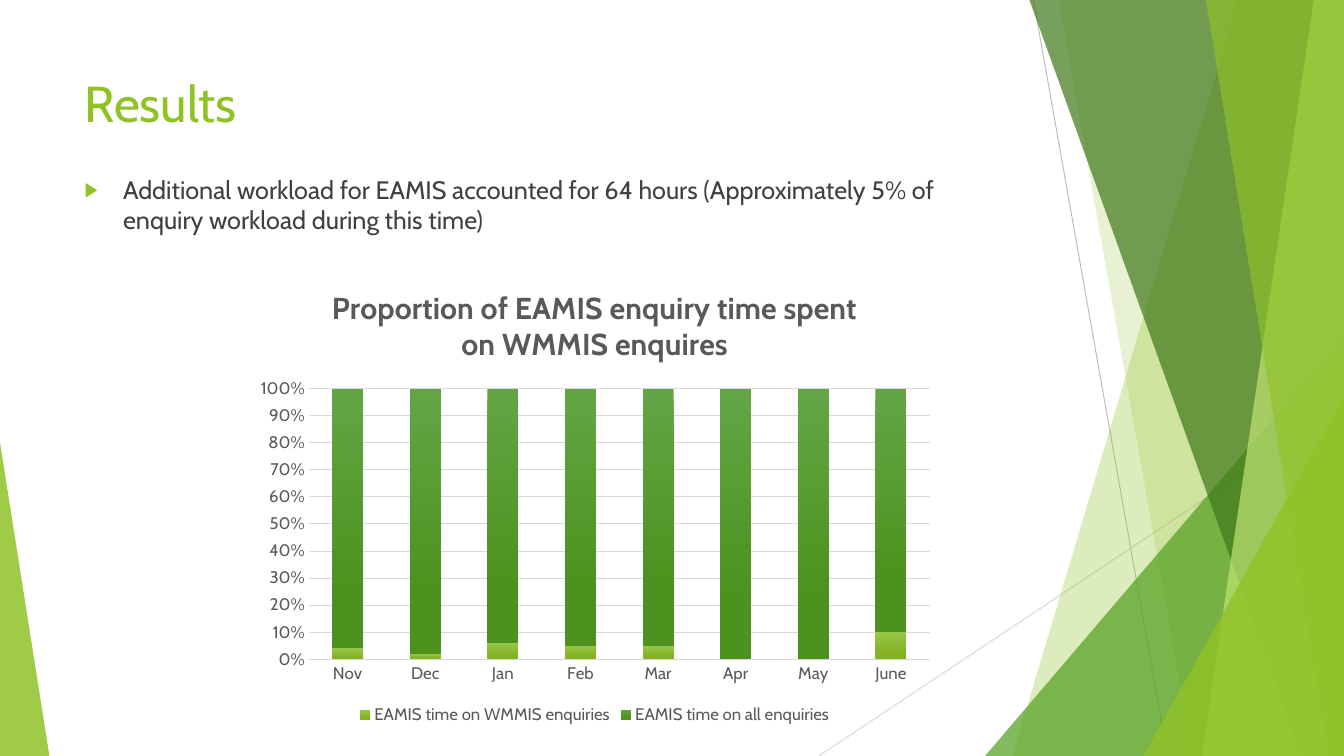
from lxml import etree
from pptx import Presentation
from pptx.chart.data import CategoryChartData
from pptx.dml.color import RGBColor
from pptx.enum.chart import XL_CHART_TYPE, XL_LEGEND_POSITION, XL_TICK_MARK
from pptx.enum.shapes import MSO_CONNECTOR, MSO_SHAPE
from pptx.enum.text import MSO_ANCHOR, PP_ALIGN
from pptx.oxml import parse_xml
from pptx.oxml.ns import qn
from pptx.util import Inches, Pt

STRAIGHT = MSO_CONNECTOR.STRAIGHT
TRIANGLE = MSO_SHAPE.ISOSCELES_TRIANGLE
STACKED_100 = XL_CHART_TYPE.COLUMN_STACKED_100
BOTTOM = XL_LEGEND_POSITION.BOTTOM
NO_TICK = XL_TICK_MARK.NONE
TOP, LEFT = MSO_ANCHOR.TOP, PP_ALIGN.LEFT

FONT = "Cabin"
LIME = RGBColor(0x90, 0xC2, 0x26)
GREEN = RGBColor(0x54, 0xA0, 0x21)
FOREST = RGBColor(0x3F, 0x78, 0x19)
PALE = RGBColor(0xC0, 0xE4, 0x74)
TEXT = RGBColor(0x40, 0x40, 0x40)
CHART_TEXT = RGBColor(0x59, 0x59, 0x59)
GREY = RGBColor(0xBF, 0xBF, 0xBF)
LIGHT_GREY = RGBColor(0xD9, 0xD9, 0xD9)
LIME_TOP, LIME_BASE = RGBColor(0x97, 0xC5, 0x47), RGBColor(0x84, 0xB2, 0x23)
GREEN_TOP, GREEN_BASE = RGBColor(0x63, 0xA5, 0x45), RGBColor(0x4D, 0x92, 0x1E)


def style_font(font, size, color, bold=False):
    font.name, font.size, font.bold = FONT, Pt(size), bold
    font.color.rgb = color


def paint(sp, color, opacity):
    sp.shadow.inherit = False
    sp.line.fill.background()
    sp.fill.solid()
    sp.fill.fore_color.rgb = color
    clr = sp._element.spPr.find(qn("a:solidFill"))[0]
    etree.SubElement(clr, qn("a:alpha"), val=str(opacity * 1000))


prs = Presentation()
prs.slide_width, prs.slide_height = Inches(13.33), Inches(7.5)
s = prs.slides.add_slide(prs.slide_layouts[1])

# Thin crossing lines
for x1, y1, x2, y2, color in [(10.25, 0, 11.58, 7.5, GREY),
                              (13.33, 4.03, 8.12, 7.5, LIGHT_GREY)]:
    line = s.shapes.add_connector(STRAIGHT, Inches(x1), Inches(y1), Inches(x2), Inches(y2))
    line.line.color.rgb = color
    line.line.width = Pt(0.75)
    etree.SubElement(line._element.spPr, qn("a:effectLst"))

# Facets: a band has (top x, bottom x) and runs to the right edge;
# a triangle has (left, top, width, apex) and stands on the bottom edge
facets = [
    ((12.28, 10.04), LIME, 30),
    ((10.5, 11.83), LIME, 20),
    ((9.77, 3.33, 3.56, 1), GREEN, 72),
    ((10.21, 12.91), FOREST, 70),
    ((13.03, 11.92), PALE, 70),
    ((11.96, 13.18), LIME, 65),
    ((11.34, 3.93, 1.99, 1), LIME, 80),
    ((0, 4.39, 0.49, 0), LIME, 85),
]
for geometry, color, opacity in facets:
    if len(geometry) == 2:
        top_x, bottom_x = geometry
        outline = s.shapes.build_freeform(Inches(top_x), 0)
        outline.add_line_segments([(Inches(x), Inches(y)) for x, y in
                                   [(13.33, 0), (13.33, 7.5), (bottom_x, 7.5)]])
        sp = outline.convert_to_shape()
    else:
        x, y, w, apex = geometry
        sp = s.shapes.add_shape(TRIANGLE, Inches(x), Inches(y), Inches(w), Inches(7.5 - y))
        sp.adjustments[0] = apex
    paint(sp, color, opacity)

# Title and body, brought in front of the facets
title, body = s.shapes.title, s.placeholders[1]
for sp, y, h, text, size, color in [
        (title, 0.67, 1.44, "Results", 36, LIME),
        (body, 1.68, 5.15, "Additional workload for EAMIS accounted for 64 hours "
         "(Approximately 5% of enquiry workload during this time)", 18, TEXT)]:
    sp.left, sp.top, sp.width, sp.height = Inches(0.74), Inches(y), Inches(9.4), Inches(h)
    tf = sp.text_frame
    tf.word_wrap = True
    tf.vertical_anchor = TOP
    p = tf.paragraphs[0]
    p.alignment = LEFT
    r = p.add_run()
    r.text = text
    style_font(r.font, size, color)
    s.shapes._spTree.append(sp._element)

# Bullet
p = body.text_frame.paragraphs[0]
p.space_before = Pt(10)
pPr = p._p.get_or_add_pPr()
pPr.set("marL", str(Inches(0.38)))
pPr.set("indent", str(Inches(-0.38)))
bullet_color = etree.SubElement(pPr, qn("a:buClr"))
etree.SubElement(bullet_color, qn("a:srgbClr"), val=str(LIME))
etree.SubElement(pPr, qn("a:buSzPct"), val="80000")
etree.SubElement(pPr, qn("a:buFont"), typeface="Arial")
etree.SubElement(pPr, qn("a:buChar"), char="▶")

# Chart
data = CategoryChartData()
data.categories = ["Nov", "Dec", "Jan", "Feb", "Mar", "Apr", "May", "June"]
data.add_series("EAMIS time on WMMIS enquiries", [4, 2, 6, 5, 5, 0, 0, 10])
data.add_series("EAMIS time on all enquiries", [96, 98, 94, 95, 95, 100, 100, 90])
chart = s.shapes.add_chart(STACKED_100, Inches(2.44), Inches(2.64),
                           Inches(6.92), Inches(4.59), data).chart
style_font(chart.font, 12, CHART_TEXT)
chart.has_title = True
r = chart.chart_title.text_frame.paragraphs[0].add_run()
r.text = "Proportion of EAMIS enquiry time spent on WMMIS enquires"
style_font(r.font, 21.6, CHART_TEXT, bold=True)
chart.chart_title.include_in_layout = False

chart.has_legend = True
chart.legend.position = BOTTOM
chart.legend.include_in_layout = False
style_font(chart.legend.font, 12, CHART_TEXT)

# Axes
cat_axis, val_axis = chart.category_axis, chart.value_axis
for axis in (cat_axis, val_axis):
    axis.major_tick_mark = axis.minor_tick_mark = NO_TICK
    style_font(axis.tick_labels.font, 12, CHART_TEXT)
cat_axis.format.line.color.rgb = LIGHT_GREY
cat_axis.format.line.width = Pt(1)
val_axis.format.line.fill.background()
val_axis.minimum_scale, val_axis.maximum_scale, val_axis.major_unit = 0, 1, 0.1
val_axis.tick_labels.number_format = "0%"
val_axis.tick_labels.number_format_is_linked = False
val_axis.major_gridlines.format.line.color.rgb = LIGHT_GREY
val_axis.major_gridlines.format.line.width = Pt(0.75)

# Columns
plot = chart.plots[0]
plot.gap_width, plot.overlap, plot.vary_by_categories = 150, 100, False
for series, colors in zip(plot.series, [(LIME_TOP, LIME_BASE), (GREEN_TOP, GREEN_BASE)]):
    fill = series.format.fill
    fill.gradient()
    fill.gradient_angle = 270
    for stop, position, color in zip(fill.gradient_stops, (0, 0.78), colors):
        stop.position = position
        stop.color.rgb = color

# Plot area position, as fractions of the chart
plot_area = chart._chartSpace.chart.plotArea
for old in plot_area.findall(qn("c:layout")):
    plot_area.remove(old)
fractions = "".join(f'<c:{tag} val="{val}"/>' for tag, val in [
    ("layoutTarget", "inner"), ("xMode", "edge"), ("yMode", "edge"),
    ("x", 0.09), ("y", 0.265), ("w", 0.89), ("h", 0.585)])
plot_area.insert(0, parse_xml(
    '<c:layout xmlns:c="http://schemas.openxmlformats.org/drawingml/2006/chart">'
    f"<c:manualLayout>{fractions}</c:manualLayout></c:layout>"))

prs.save("out.pptx")
